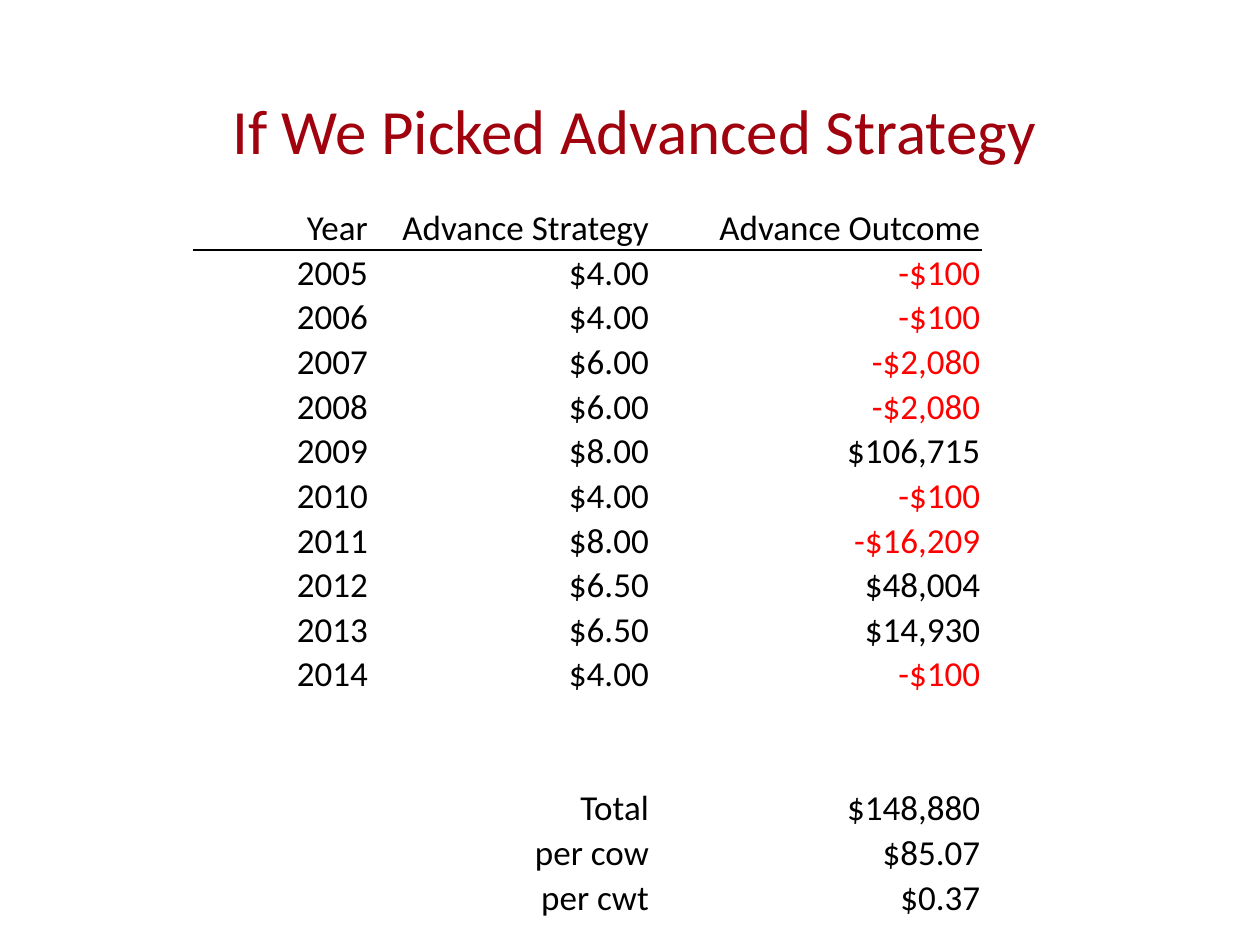
import typing

import lxml.etree
import pptx
import pptx.dml.color
import pptx.enum.text
import pptx.oxml
import pptx.oxml.ns
import pptx.util

INCH = pptx.util.Inches
ALIGN = pptx.enum.text.PP_ALIGN
ANCHOR = pptx.enum.text.MSO_ANCHOR
FONT = "Calibri"
BLACK, RED, CRIMSON = "000000", "FF0000", "A0020E"


class Row(typing.NamedTuple):
    year: str = ""
    plan: str = ""
    gain: str = ""


ROWS = [
    Row("Year", "Advance Strategy", "Advance Outcome"),
    Row("2005", "$4.00", "-$100"),
    Row("2006", "$4.00", "-$100"),
    Row("2007", "$6.00", "-$2,080"),
    Row("2008", "$6.00", "-$2,080"),
    Row("2009", "$8.00", "$106,715"),
    Row("2010", "$4.00", "-$100"),
    Row("2011", "$8.00", "-$16,209"),
    Row("2012", "$6.50", "$48,004"),
    Row("2013", "$6.50", "$14,930"),
    Row("2014", "$4.00", "-$100"),
    Row(),
    Row(),
    Row(plan="Total", gain="$148,880"),
    Row(plan="per cow", gain="$85.07"),
    Row(plan="per cwt", gain="$0.37"),
]
WIDTHS = (1.39, 2.23, 2.63)
HEIGHT = 5.67


def paint(hue: str) -> pptx.dml.color.RGBColor:
    return pptx.dml.color.RGBColor.from_string(hue)


def write(frame, text: str, size: int, hue: str, align) -> None:
    frame.text = text
    par = frame.paragraphs[0]
    par.alignment = align
    for run in par.runs:
        run.font.name = FONT
        run.font.size = pptx.util.Pt(size)
        run.font.color.rgb = paint(hue)


def rule(cell, side: str) -> None:
    """Draw a thin black border; side is the tag lnT or lnB."""
    line = pptx.oxml.parse_xml(
        f'<a:{side} {pptx.oxml.ns.nsdecls("a")} w="12700"><a:solidFill>'
        f'<a:srgbClr val="{BLACK}"/></a:solidFill></a:{side}>'
    )
    cell._tc.get_or_add_tcPr().insert(0, line)


def add_title(slide, text: str) -> None:
    box = slide.shapes.add_textbox(INCH(0.24), INCH(0.55), INCH(9.59), INCH(0.95))
    frame = box.text_frame
    frame.word_wrap = True
    frame.vertical_anchor = ANCHOR.MIDDLE
    write(frame, text, 36, CRIMSON, ALIGN.CENTER)


def fill_cell(cell, text: str) -> None:
    cell.fill.background()
    cell.vertical_anchor = ANCHOR.BOTTOM
    cell.margin_left = cell.margin_right = cell.margin_top = INCH(0.01)
    cell.margin_bottom = 0
    hue = RED if text.startswith("-") else BLACK
    write(cell.text_frame, text, 20, hue, ALIGN.RIGHT)


def add_grid(slide, rows: list[Row]) -> None:
    grid = slide.shapes.add_table(
        len(rows), len(WIDTHS), INCH(1.54), INCH(1.63),
        INCH(sum(WIDTHS)), INCH(HEIGHT),
    ).table
    grid.first_row = grid.horz_banding = False
    for col, width in zip(grid.columns, WIDTHS):
        col.width = INCH(width)
    for r, row in enumerate(rows):
        grid.rows[r].height = INCH(HEIGHT / len(rows))
        for c, text in enumerate(row):
            fill_cell(grid.cell(r, c), text)
    for c in range(len(WIDTHS)):
        rule(grid.cell(0, c), "lnB")
        rule(grid.cell(1, c), "lnT")


def main() -> None:
    deck = pptx.Presentation()
    deck.slide_width, deck.slide_height = INCH(10), INCH(7.5)
    slide = deck.slides.add_slide(deck.slide_layouts[6])
    add_title(slide, "If We Picked Advanced Strategy")
    add_grid(slide, ROWS)
    deck.save("out.pptx")


if __name__ == "__main__":
    main()
